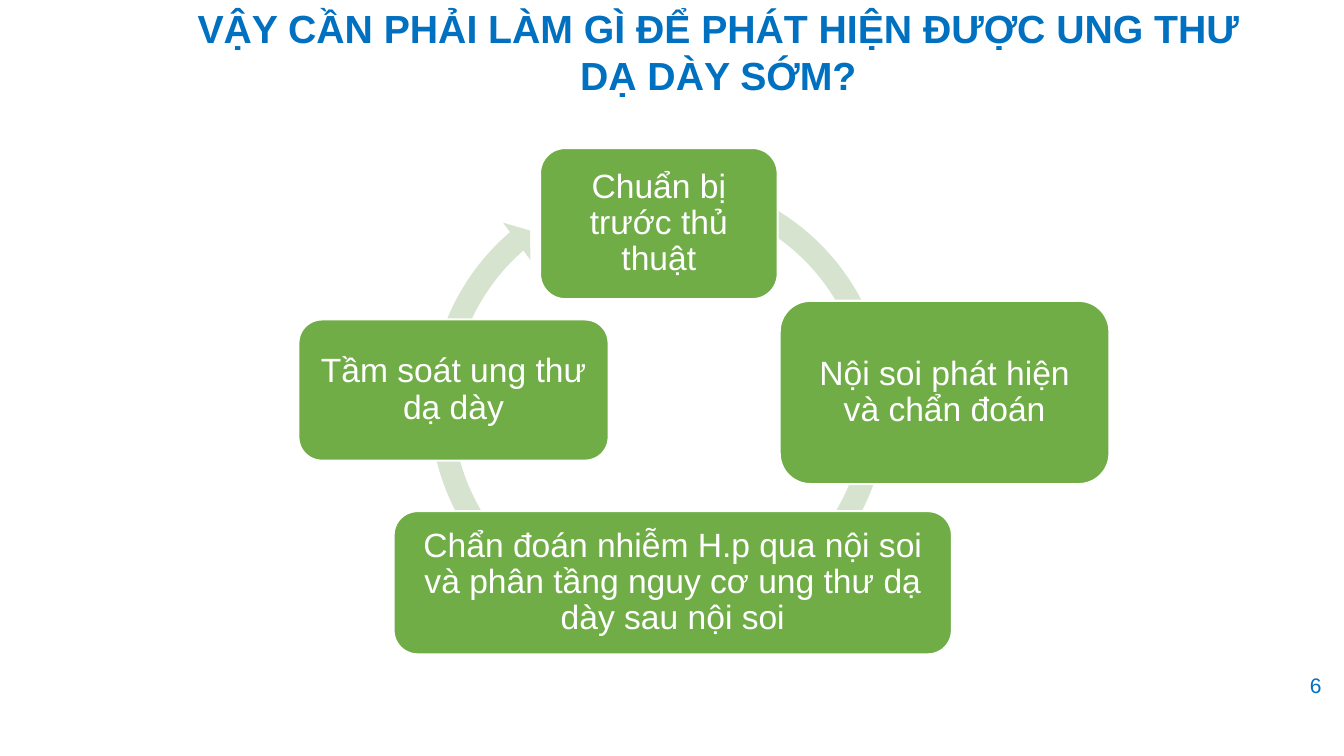
"""Build the slide on steps for early detection of stomach cancer."""
from pptx import Presentation
from pptx.dml.color import RGBColor
from pptx.enum import shapes, text
from pptx.util import Cm, Pt

BLUE = RGBColor(0x00, 0x70, 0xC0)
GREEN = RGBColor(0x70, 0xAD, 0x47)
PALE_GREEN = RGBColor(0xD5, 0xE3, 0xCF)
WHITE = RGBColor(0xFF, 0xFF, 0xFF)


def write_text(shape, content, size, color, bold=False):
    frame = shape.text_frame
    frame.word_wrap = True
    frame.vertical_anchor = text.MSO_ANCHOR.MIDDLE
    paragraph = frame.paragraphs[0]
    paragraph.alignment = text.PP_ALIGN.CENTER
    run = paragraph.add_run()
    run.text = content
    run.font.name = "Arial"
    run.font.size = Pt(size)
    run.font.bold = bold
    run.font.color.rgb = color
    return paragraph


presentation = Presentation()
presentation.slide_width = Cm(33.87)
presentation.slide_height = Cm(19.05)
slide = presentation.slides.add_slide(presentation.slide_layouts[6])

number = slide.shapes.add_textbox(Cm(32.46), Cm(16.76), Cm(1.4), Cm(0.99))
write_text(number, "6", 15, BLUE)

title = slide.shapes.add_textbox(Cm(4.04), Cm(-0.1), Cm(28.12), Cm(2.8))
write_text(title, "VẬY CẦN PHẢI LÀM GÌ ĐỂ PHÁT HIỆN ĐƯỢC UNG THƯ DẠ DÀY SỚM?", 28, BLUE, bold=True)

cycle = slide.shapes.add_shape(
    shapes.MSO_SHAPE.CIRCULAR_ARROW, Cm(10.54), Cm(4.17), Cm(12.12), Cm(12.12))
cycle.shadow.inherit = False
cycle.fill.solid()
cycle.fill.fore_color.rgb = PALE_GREEN
cycle.line.fill.background()
for index, value in enumerate((0.047, 2.729, 137.532, 174.351, 0.048)):
    cycle.adjustments[index] = value

steps = [
    ("Chuẩn bị trước thủ thuật", 13.61, 3.73, 5.99, 3.81),
    ("Nội soi phát hiện và chẩn đoán", 19.65, 7.58, 8.31, 4.62),
    ("Chẩn đoán nhiễm H.p qua nội soi và phân tầng nguy cơ ung thư dạ dày sau nội soi",
     9.92, 12.88, 14.07, 3.61),
    ("Tầm soát ung thư dạ dày", 7.52, 8.05, 7.82, 3.56),
]
for label, left, top, width, height in steps:
    box = slide.shapes.add_shape(
        shapes.MSO_SHAPE.ROUNDED_RECTANGLE, Cm(left), Cm(top), Cm(width), Cm(height))
    box.shadow.inherit = False
    box.fill.solid()
    box.fill.fore_color.rgb = GREEN
    box.line.color.rgb = WHITE
    box.line.width = Pt(1.5)
    frame = box.text_frame
    frame.margin_left = frame.margin_right = Cm(0.25)
    frame.margin_top = frame.margin_bottom = Cm(0.25)
    write_text(box, label, 24, WHITE).line_spacing = 0.9

presentation.save("out.pptx")
